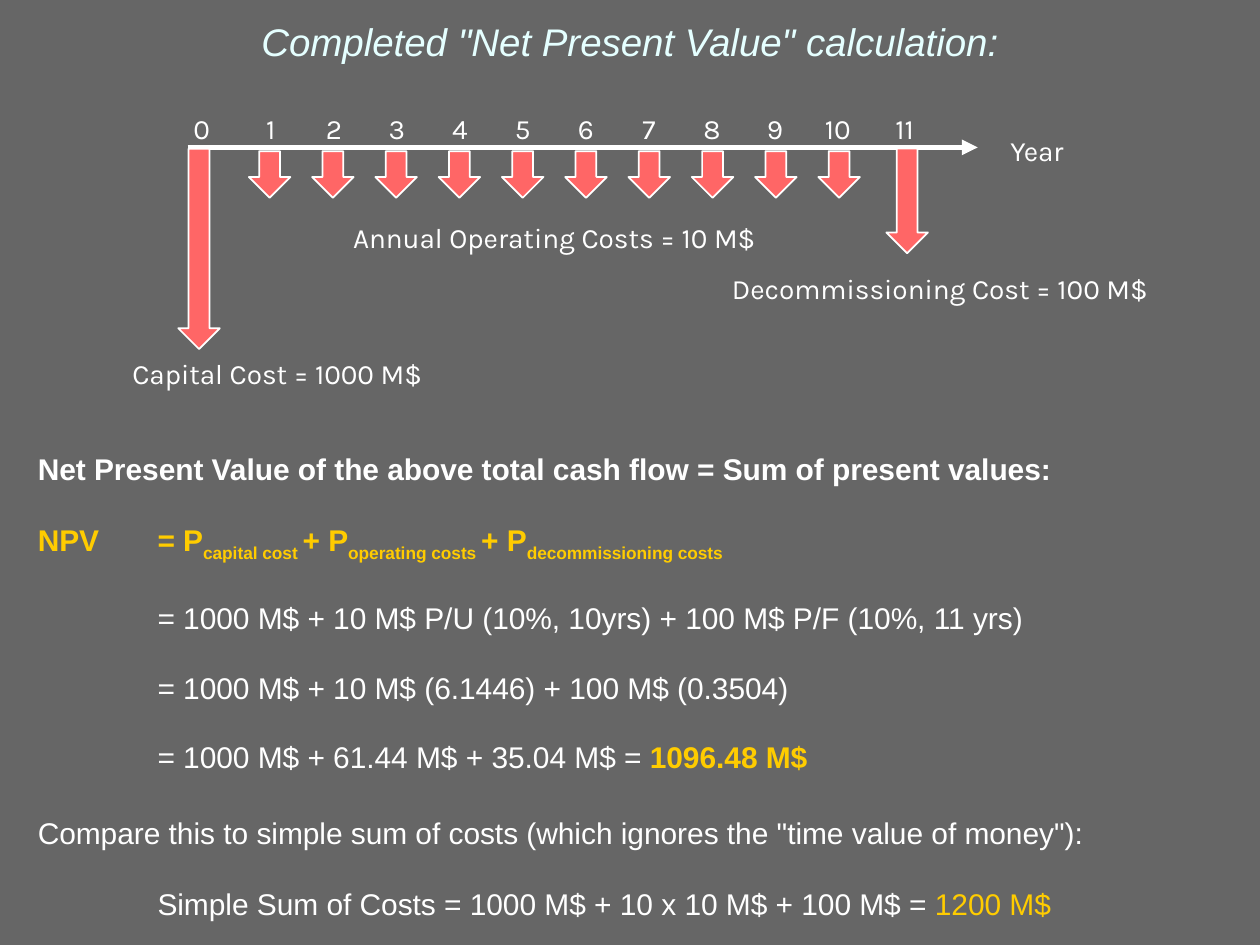
from lxml.etree import SubElement
from pptx import Presentation
from pptx.dml.color import RGBColor
from pptx.enum.shapes import MSO_CONNECTOR as Conn, MSO_SHAPE as Shape
from pptx.enum.text import MSO_ANCHOR as Anchor, PP_ALIGN as Align
from pptx.oxml.ns import qn
from pptx.util import Inches, Pt

WHITE, GOLD, RED, ICE, GREY = "FFFFFF", "FFCC00", "FF6666", "E5FFFF", "666666"
PLAIN = dict(name="Arial", size=Pt(17.1), bold=False, color=WHITE)
BOLD = {**PLAIN, "bold": True}
GOLDEN = {**PLAIN, "color": GOLD}
STRONG = {**BOLD, "color": GOLD}
SUB = {**STRONG, "base": -26000}
TITLE = dict(name="Arial", size=Pt(22), italic=True, color=ICE)
LABEL = dict(name="Karla", size=Pt(16), color=WHITE)

# Space before in points, then the runs of each line
LINES = [
    (0, [("Net Present Value of the above total cash flow = Sum of present values:", BOLD)]),
    (19.8, [("NPV\t= P", STRONG), ("capital cost ", SUB),
            ("+ P", STRONG), ("operating costs ", SUB),
            ("+ P", STRONG), ("decommissioning costs", SUB)]),
    (21.3, [("\t= 1000 M$ + 10 M$ P/U (10%, 10yrs) + 100 M$ P/F (10%, 11 yrs)", PLAIN)]),
    (19.2, [("\t= 1000 M$ + 10 M$ (6.1446) + 100 M$ (0.3504)", PLAIN)]),
    (19.2, [("\t= 1000 M$ + 61.44 M$ + 35.04 M$ = ", PLAIN), ("1096.48 M$", STRONG)]),
    (22.6, [('Compare this to simple sum of costs (which ignores the "time value of money"):', PLAIN)]),
    (20.3, [("\tSimple Sum of Costs = 1000 M$ + 10 x 10 M$ + 100 M$ = ", PLAIN),
            ("1200 M$", GOLDEN)]),
]

NOTES = [
    ("Decommissioning Cost = 100 M$", 7.46, 2.11, 3.92),
    ("Capital Cost = 1000 M$", 2.2, 2.78, 2.75),
    ("Annual Operating Costs = 10 M$", 4.4, 1.7, 5.53),
    ("Year", 8.23, 1.01, 0.83),
]


def paint(form, color):
    """Give a fill, line or font format a solid colour."""
    if hasattr(form, "solid"):
        form.solid()
        form.fore_color.rgb = RGBColor.from_string(color)
    elif hasattr(form, "fill"):
        form.fill.solid()
        form.fill.fore_color.rgb = RGBColor.from_string(color)


def add_run(para, text, style):
    run = para.add_run()
    run.text = text
    for key, value in style.items():
        if key == "color":
            paint(run.font, value)
        elif key == "base":
            run.font._element.set("baseline", str(value))
        else:
            setattr(run.font, key, value)


def add_box(slide, left, top, width, height, anchor=Anchor.TOP):
    box = slide.shapes.add_textbox(*map(Inches, (left, top, width, height)))
    frame = box.text_frame
    form = dict.fromkeys(
        ("margin_left", "margin_right", "margin_top", "margin_bottom"), Inches(0.05))
    form.update(word_wrap=True, vertical_anchor=anchor)
    for key, value in form.items():
        setattr(frame, key, value)
    return frame


def add_label(slide, text, mid, top, width, height=0.36, style=LABEL, anchor=Anchor.TOP):
    """Add one line of text centred on mid."""
    frame = add_box(slide, mid - width / 2, top, width, height, anchor)
    para = frame.paragraphs[0]
    para.alignment = Align.CENTER
    add_run(para, text, style)


def add_cost(slide, mid, top, height):
    """Add a down arrow centred on mid."""
    width = 0.33
    arrow = slide.shapes.add_shape(
        Shape.DOWN_ARROW, *map(Inches, (mid - width / 2, top, width, height)))
    arrow.shadow.inherit = False
    paint(arrow.fill, RED)
    paint(arrow.line, WHITE)
    arrow.line.width = Pt(1)


def add_axis(slide, left, right, y):
    axis = slide.shapes.add_connector(
        Conn.STRAIGHT, *map(Inches, (left, y, right, y)))
    paint(axis.line, WHITE)
    axis.line.width = Pt(3)
    SubElement(axis.line._get_or_add_ln(), qn("a:tailEnd"), type="triangle")
    SubElement(axis._element.spPr, qn("a:effectLst"))


def add_body(slide):
    frame = add_box(slide, 0.25, 3.53, 9.75, 3.7)
    for i, (space, runs) in enumerate(LINES):
        para = frame.add_paragraph() if i else frame.paragraphs[0]
        tabs = SubElement(para._p.get_or_add_pPr(), qn("a:tabLst"))
        SubElement(tabs, qn("a:tab"), pos=str(Inches(0.95)), algn="l")
        para.space_before = Pt(space)
        for text, style in runs:
            add_run(para, text, style)


def add_flow(slide):
    """Draw the time line with its costs and years."""
    add_axis(slide, 1.49, 7.76, 1.17)
    add_cost(slide, 1.58, 1.18, 1.59)
    add_cost(slide, 7.2, 1.18, 0.83)
    gap = (6.66 - 2.14) / 9
    for i in range(10):
        add_cost(slide, 2.14 + i * gap, 1.2, 0.37)
    years = [1.6, *(2.15 + i * 0.5 for i in range(10)), 7.18]
    for year, mid in enumerate(years):
        add_label(slide, str(year), mid, 0.84, 0.5)
    for note in NOTES:
        add_label(slide, *note)


def main():
    prs = Presentation()
    prs.slide_width, prs.slide_height = Inches(10), Inches(7.5)
    slide = prs.slides.add_slide(prs.slide_layouts[6])
    paint(slide.background.fill, GREY)
    add_label(slide, 'Completed "Net Present Value" calculation:',
              5, 0.08, 9.33, 0.5, TITLE, Anchor.MIDDLE)
    add_body(slide)
    add_flow(slide)
    prs.save("out.pptx")


if __name__ == "__main__":
    main()
